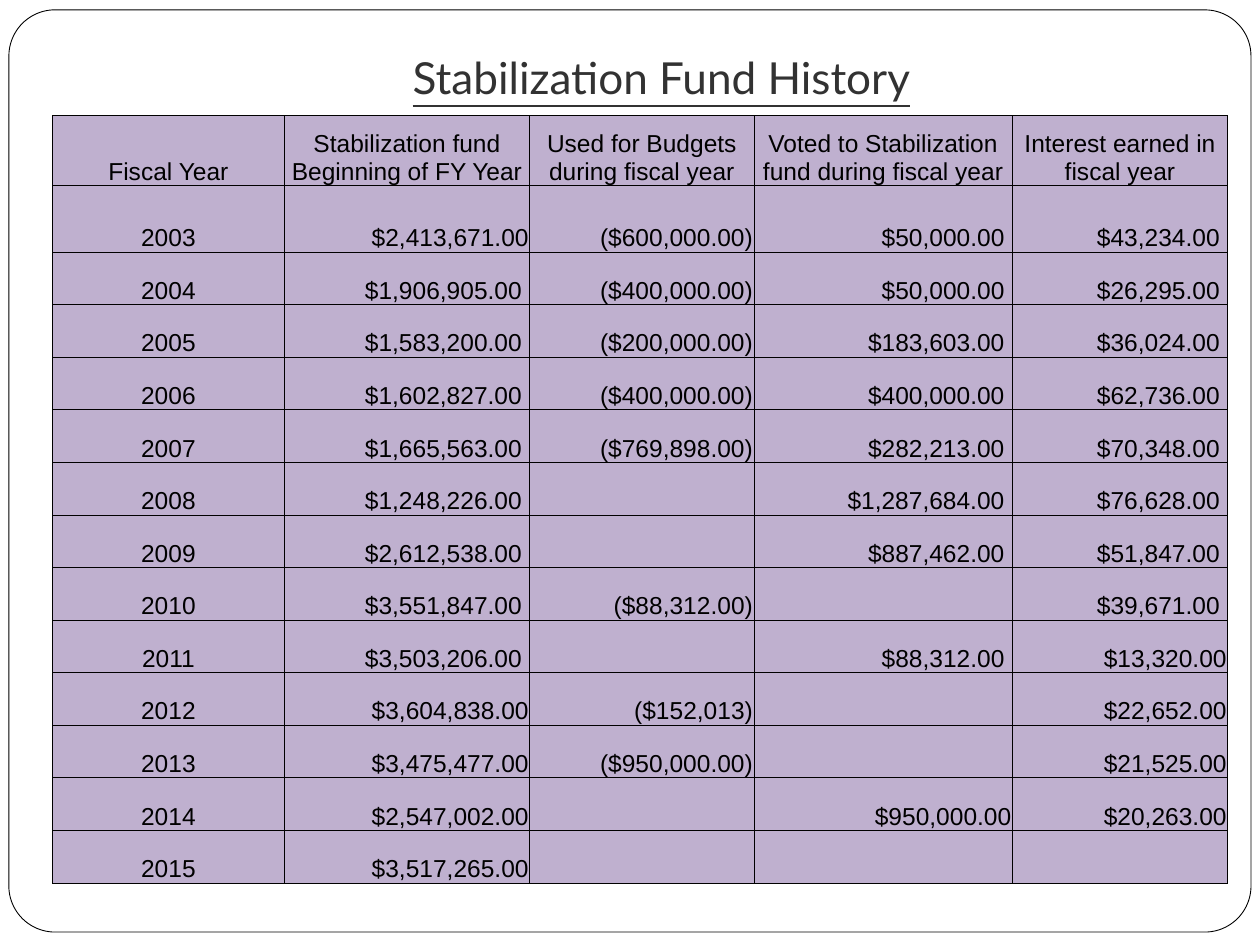
from lxml.etree import SubElement
from pptx import Presentation
from pptx.dml.color import RGBColor
from pptx.enum.shapes import MSO_SHAPE
from pptx.enum.text import MSO_ANCHOR, MSO_AUTO_SIZE, PP_ALIGN
from pptx.oxml.ns import qn
from pptx.util import Cm, Pt

HEADERS = [
    "Fiscal Year",
    "Stabilization fund Beginning of FY Year",
    "Used for Budgets during fiscal year",
    "Voted to Stabilization fund during fiscal year",
    "Interest earned in fiscal year",
]
HISTORY = [
    ["2003", "$2,413,671.00", "($600,000.00)", "$50,000.00 ", "$43,234.00 "],
    ["2004", "$1,906,905.00 ", "($400,000.00)", "$50,000.00 ", "$26,295.00 "],
    ["2005", "$1,583,200.00 ", "($200,000.00)", "$183,603.00 ", "$36,024.00 "],
    ["2006", "$1,602,827.00 ", "($400,000.00)", "$400,000.00 ", "$62,736.00 "],
    ["2007", "$1,665,563.00 ", "($769,898.00)", "$282,213.00 ", "$70,348.00 "],
    ["2008", "$1,248,226.00 ", "", "$1,287,684.00 ", "$76,628.00 "],
    ["2009", "$2,612,538.00 ", "", "$887,462.00 ", "$51,847.00 "],
    ["2010", "$3,551,847.00 ", "($88,312.00)", "", "$39,671.00 "],
    ["2011", "$3,503,206.00 ", "", "$88,312.00 ", "$13,320.00"],
    ["2012", "$3,604,838.00", "($152,013)", "", "$22,652.00"],
    ["2013", "$3,475,477.00", "($950,000.00)", "", "$21,525.00"],
    ["2014", "$2,547,002.00", "", "$950,000.00", "$20,263.00"],
    ["2015", "$3,517,265.00", "", "", ""],
]
COLUMN_WIDTHS = [4.67, 4.95, 4.52, 5.21, 4.34]
ROW_HEIGHTS = [1.41, 1.34] + [1.06] * (len(HISTORY) - 1)


def color(value):
    return RGBColor.from_string(value)


class SlideBuilder:
    title_font = "Lato"
    table_font = "Arial"
    title_color = "323232"
    ink = "000000"
    paper = "FFFFFF"
    cell_color = "BFB0CF"
    line_width = Pt(0.5)

    def __init__(self, slide):
        self.slide = slide

    def format_paragraph(self, paragraph, font, size, font_color, alignment):
        paragraph.alignment = alignment
        for run in paragraph.runs:
            run.font.name = font
            run.font.size = Pt(size)
            run.font.color.rgb = color(font_color)

    def title(self, text, left, top, width, height):
        shape = self.slide.shapes.title
        shape.left, shape.top = Cm(left), Cm(top)
        shape.width, shape.height = Cm(width), Cm(height)
        text_frame = shape.text_frame
        text_frame.text = text
        text_frame.auto_size = MSO_AUTO_SIZE.NONE
        text_frame.vertical_anchor = MSO_ANCHOR.BOTTOM
        text_frame.margin_bottom = Cm(0.25)
        paragraph = text_frame.paragraphs[0]
        self.format_paragraph(paragraph, self.title_font, 25.2, self.title_color, PP_ALIGN.CENTER)
        paragraph.runs[0].font.underline = True

    def frame(self, left, top, width, height):
        shape = self.slide.shapes.add_shape(
            MSO_SHAPE.ROUNDED_RECTANGLE, Cm(left), Cm(top), Cm(width), Cm(height))
        shape.adjustments[0] = 0.05
        shape.shadow.inherit = False
        shape.fill.solid()
        shape.fill.fore_color.rgb = color(self.paper)
        shape.line.color.rgb = color(self.ink)
        shape.line.width = self.line_width
        self.slide.shapes.title.element.addprevious(shape.element)

    def borders(self, cell):
        properties = cell._tc.get_or_add_tcPr()
        for side in ("a:lnL", "a:lnR", "a:lnT", "a:lnB"):
            line = SubElement(properties, qn(side), w=str(self.line_width))
            fill = SubElement(line, qn("a:solidFill"))
            SubElement(fill, qn("a:srgbClr"), val=self.ink)

    def cell(self, cell, text, alignment):
        self.borders(cell)
        cell.fill.solid()
        cell.fill.fore_color.rgb = color(self.cell_color)
        cell.vertical_anchor = MSO_ANCHOR.BOTTOM
        cell.margin_left = cell.margin_right = cell.margin_top = Cm(0.02)
        cell.margin_bottom = Cm(0)
        cell.text_frame.text = text
        self.format_paragraph(
            cell.text_frame.paragraphs[0], self.table_font, 14, self.ink, alignment)

    def table(self, rows, left, top, widths, heights):
        table = self.slide.shapes.add_table(
            len(rows), len(widths), Cm(left), Cm(top),
            Cm(sum(widths)), Cm(sum(heights))).table
        table.horz_banding = False
        table.first_row = False
        for column, width in zip(table.columns, widths):
            column.width = Cm(width)
        for row, height in zip(table.rows, heights):
            row.height = Cm(height)
        for row_index, values in enumerate(rows):
            for column_index, text in enumerate(values):
                centered = row_index == 0 or column_index == 0
                alignment = PP_ALIGN.CENTER if centered else PP_ALIGN.RIGHT
                self.cell(table.cell(row_index, column_index), text, alignment)


def main():
    presentation = Presentation()
    presentation.slide_width = Cm(25.4)
    presentation.slide_height = Cm(19.05)
    builder = SlideBuilder(presentation.slides.add_slide(presentation.slide_layouts[5]))
    builder.frame(0.18, 0.2, 25.04, 18.59)
    builder.title("Stabilization Fund History", 2.54, 0.76, 21.59, 1.57)
    builder.table([HEADERS] + HISTORY, 1.06, 2.33, COLUMN_WIDTHS, ROW_HEIGHTS)
    presentation.save("out.pptx")


if __name__ == "__main__":
    main()
